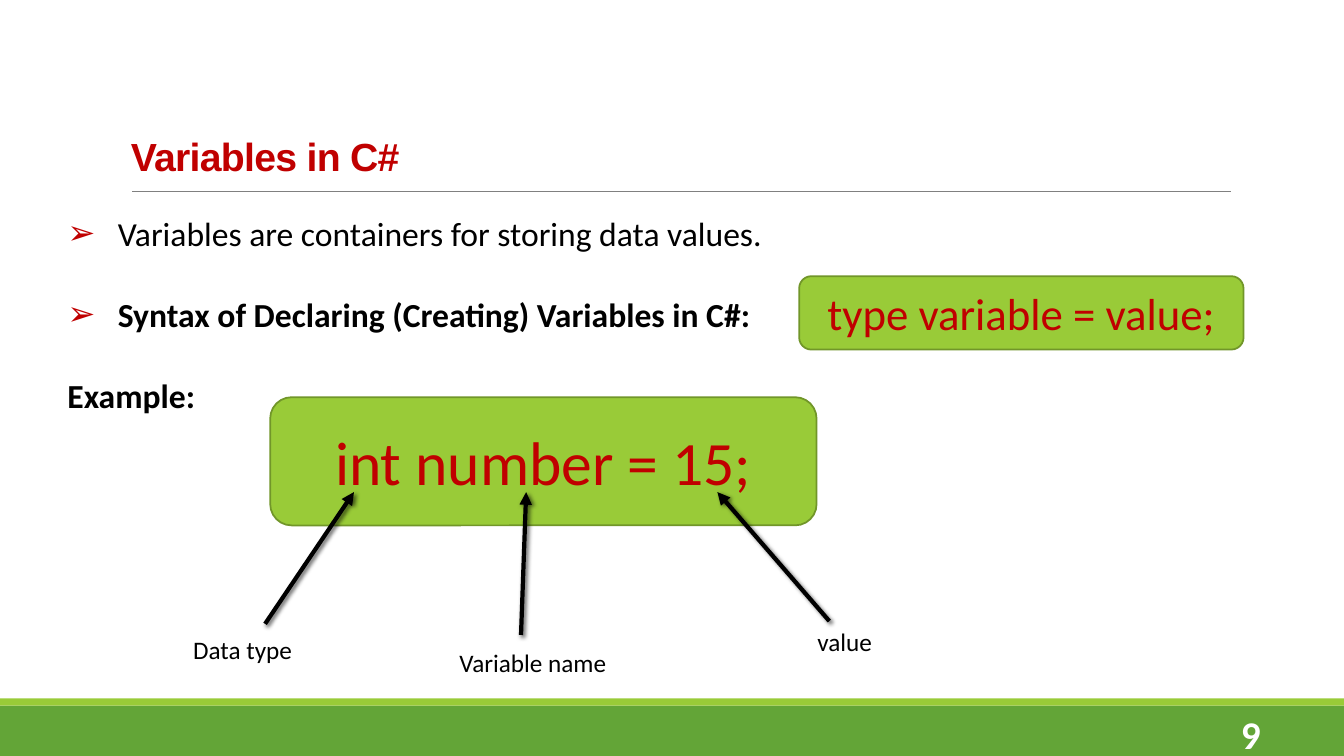
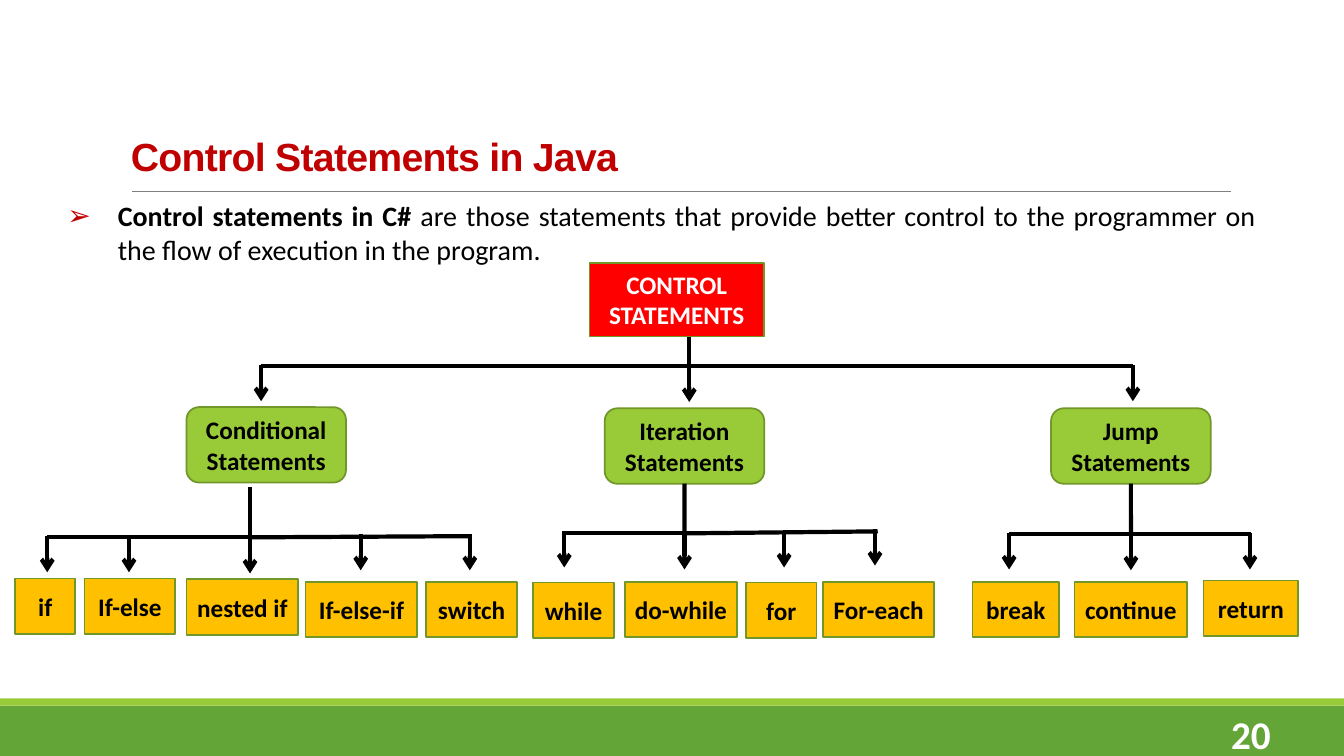
"""Build two lecture slides: variables in C# and a tree of control statements."""
from lxml import etree
from pptx import Presentation
from pptx.dml.color import RGBColor
from pptx.enum import shapes, text
from pptx.oxml.ns import qn
from pptx.util import Cm, Pt

COLOURS = {
    "band": "63A537", "lime": "99CB38", "edge": "719629", "rule": "808080",
    "crimson": "C00000", "red": "FF0000", "amber": "FFC000",
    "ink": "000000", "white": "FFFFFF",
}
RGB = {name: RGBColor.from_string(value) for name, value in COLOURS.items()}
RECT = shapes.MSO_SHAPE.RECTANGLE
ROUND = shapes.MSO_SHAPE.ROUNDED_RECTANGLE


def add_block(slide, place, label="", size=18, colour="ink", bold=False,
              preset=None, fill=None, edge=None, centred=True, font="Calibri"):
    left, top, width, height = map(Cm, place)
    if preset is None:
        block = slide.shapes.add_textbox(left, top, width, height)
    else:
        block = slide.shapes.add_shape(preset, left, top, width, height)
        block.shadow.inherit = False
        block.fill.solid()
        block.fill.fore_color.rgb = RGB[fill]
        block.text_frame.margin_left = block.text_frame.margin_right = Cm(0.1)
        if edge:
            block.line.color.rgb = RGB[edge]
            block.line.width = Pt(1.25)
        else:
            block.line.fill.background()
    block.text_frame.word_wrap = True
    if label:
        paragraph = block.text_frame.paragraphs[0]
        paragraph.alignment = text.PP_ALIGN.CENTER if centred else text.PP_ALIGN.LEFT
        run = paragraph.add_run()
        run.text = label
        run.font.name, run.font.size, run.font.bold = font, Pt(size), bold
        run.font.color.rgb = RGB[colour]
    return block


def add_line(slide, start, end, colour="ink", weight=3, tip=None, shadow=False):
    line = slide.shapes.add_connector(
        shapes.MSO_CONNECTOR.STRAIGHT, *map(Cm, (*start, *end)))
    line.line.color.rgb = RGB[colour]
    line.line.width = Pt(weight)
    properties = line._element.spPr
    if tip:
        etree.SubElement(properties.find(qn("a:ln")), qn("a:tailEnd"), type=tip)
    effects = etree.SubElement(properties, qn("a:effectLst"))
    if shadow:
        cast = etree.SubElement(effects, qn("a:outerShdw"), blurRad=str(Pt(3)),
                                dist=str(Pt(2)), dir="2700000", rotWithShape="0")
        tint = etree.SubElement(cast, qn("a:srgbClr"), val=COLOURS["ink"])
        etree.SubElement(tint, qn("a:alpha"), val="60000")
    return line


deck = Presentation()
deck.slide_width, deck.slide_height = Cm(33.87), Cm(19.05)

pages = [
    ("Variables in C#", "9", (1.45, 5.23, 30.05, 5.38), 24, [
        (True, [("Variables are containers for storing data values.", False)]),
        (True, [("Syntax of Declaring (Creating) Variables in C#:", True)]),
        (False, [("Example:", True)]),
    ]),
    ("Control Statements in Java", "20", (1.45, 4.88, 30.45, 1.96), 20, [
        (True, [("Control statements in C# ", True),
                ("are those statements that provide better control to the "
                 "programmer on the flow of execution in the program.", False)]),
    ]),
]
slides = []
for heading, number, body_place, body_size, points in pages:
    slide = deck.slides.add_slide(deck.slide_layouts[6])
    slides.append(slide)
    add_block(slide, (0, 17.78, 33.87, 1.27), preset=RECT, fill="band")
    add_block(slide, (0, 17.6, 33.87, 0.18), preset=RECT, fill="lime")
    add_line(slide, (3.33, 4.83), (31.01, 4.83), "rule", 0.5)

    title = add_block(slide, (3.05, 0.61, 27.94, 4.04), heading, 28, "crimson",
                      True, centred=False, font="Arial")
    title.text_frame.vertical_anchor = text.MSO_ANCHOR.BOTTOM
    title_line = title.text_frame.paragraphs[0]
    title_line.line_spacing = 0.85
    title_line.runs[0].font._element.set("spc", "-50")

    page_number = add_block(slide, (29.39, 17.17, 4.27, 1.85), number, 28, "white", True)
    page_number.text_frame.paragraphs[0].line_spacing = 1.5

    body = add_block(slide, body_place).text_frame
    for index, (bulleted, pieces) in enumerate(points):
        point = body.add_paragraph() if index else body.paragraphs[0]
        point.alignment = text.PP_ALIGN.JUSTIFY
        point.space_before = Pt(29.3 if index else 0)
        if bulleted:
            layout = point._element.get_or_add_pPr()
            layout.set("marL", str(Cm(1.27)))
            layout.set("indent", str(-Cm(1.27)))
            tint = etree.SubElement(layout, qn("a:buClr"))
            etree.SubElement(tint, qn("a:srgbClr"), val=COLOURS["crimson"])
            etree.SubElement(layout, qn("a:buFont"), typeface="Arial")
            etree.SubElement(layout, qn("a:buChar"), char="➢")
        for wording, bold in pieces:
            run = point.add_run()
            run.text = wording
            run.font.name, run.font.size, run.font.bold = "Calibri", Pt(body_size), bold
            run.font.color.rgb = RGB["ink"]

variables, control = slides

add_block(variables, (6.81, 10.01, 13.77, 3.23), "int number = 15;", 44, "crimson",
          preset=ROUND, fill="lime", edge="edge")
add_block(variables, (20.14, 6.96, 11.2, 1.85), "type variable = value;", 32, "crimson",
          preset=ROUND, fill="lime", edge="edge")
for part, place, start, end in [
    ("Data type", (4.62, 15.85, 4.14, 1.02), (6.68, 15.72), (8.92, 12.4)),
    ("Variable name", (11.33, 16.18, 5.13, 1.02), (13.13, 16), (13.26, 12.4)),
    ("value", (20.35, 15.67, 4.14, 1.02), (20.9, 15.65), (18.08, 12.4)),
]:
    add_line(variables, start, end, tip="triangle", shadow=True)
    add_block(variables, place, part, centred=False)

add_block(control, (14.86, 6.63, 4.39, 1.85), "CONTROL STATEMENTS", 18, "white", True,
          preset=RECT, fill="red", edge="edge")
families = {}
for family, left, top in [("Conditional", 4.7, 10.26), ("Iteration", 15.24, 10.29),
                          ("Jump", 26.49, 10.29)]:
    families[family] = add_block(control, (left, top, 4.02, 1.9), family + " Statements",
                                 bold=True, preset=ROUND, fill="lime", edge="edge")

for keyword, left, top, width in [
    ("if", 0.38, 14.58, 1.52), ("If-else", 2.13, 14.58, 2.29),
    ("nested if", 4.7, 14.6, 2.82), ("If-else-if", 7.7, 14.66, 2.82),
    ("switch", 10.74, 14.66, 2.29), ("while", 13.44, 14.68, 2.03),
    ("do-while", 15.75, 14.66, 2.82), ("for", 18.8, 14.68, 1.78),
    ("For-each", 20.75, 14.66, 2.79), ("break", 24.51, 14.66, 2.18),
    ("continue", 27.08, 14.66, 2.84), ("return", 30.33, 14.63, 2.39),
]:
    add_block(control, (left, top, width, 1.4), keyword, bold=True,
              preset=RECT, fill="amber", edge="edge")

for joined, fork, stem_top, rail_ends, drops in [
    (None, (17.37, 9.22), 8.48, [(6.58, 9.22), (28.55, 9.22)],
     [(6.58, 9.2), (28.55, 9.2)]),
    (None, (6.3, 13.54), 12.27, [(1.19, 13.54), (11.89, 13.51)],
     [(1.19, 13.51), (3.25, 13.51), (9.09, 13.46), (11.84, 13.46)]),
    ("Iteration", (17.25, 13.44), 12.19, [(14.22, 13.44), (22.12, 13.39)],
     [(14.22, 13.39), (19.76, 13.39), (22.05, 13.34)]),
    ("Jump", (28.5, 13.46), 12.19, [(25.43, 13.46), (31.52, 13.46)],
     [(25.43, 13.44), (31.5, 13.44)]),
]:
    stem = add_line(control, (fork[0], stem_top), fork)
    if joined:
        stem.begin_connect(families[joined], 2)
    for rail_end in rail_ends:
        add_line(control, fork, rail_end)
    for x, y in [fork, *drops]:
        add_line(control, (x, y), (x, y + 0.91), tip="arrow")

deck.save("out.pptx")
